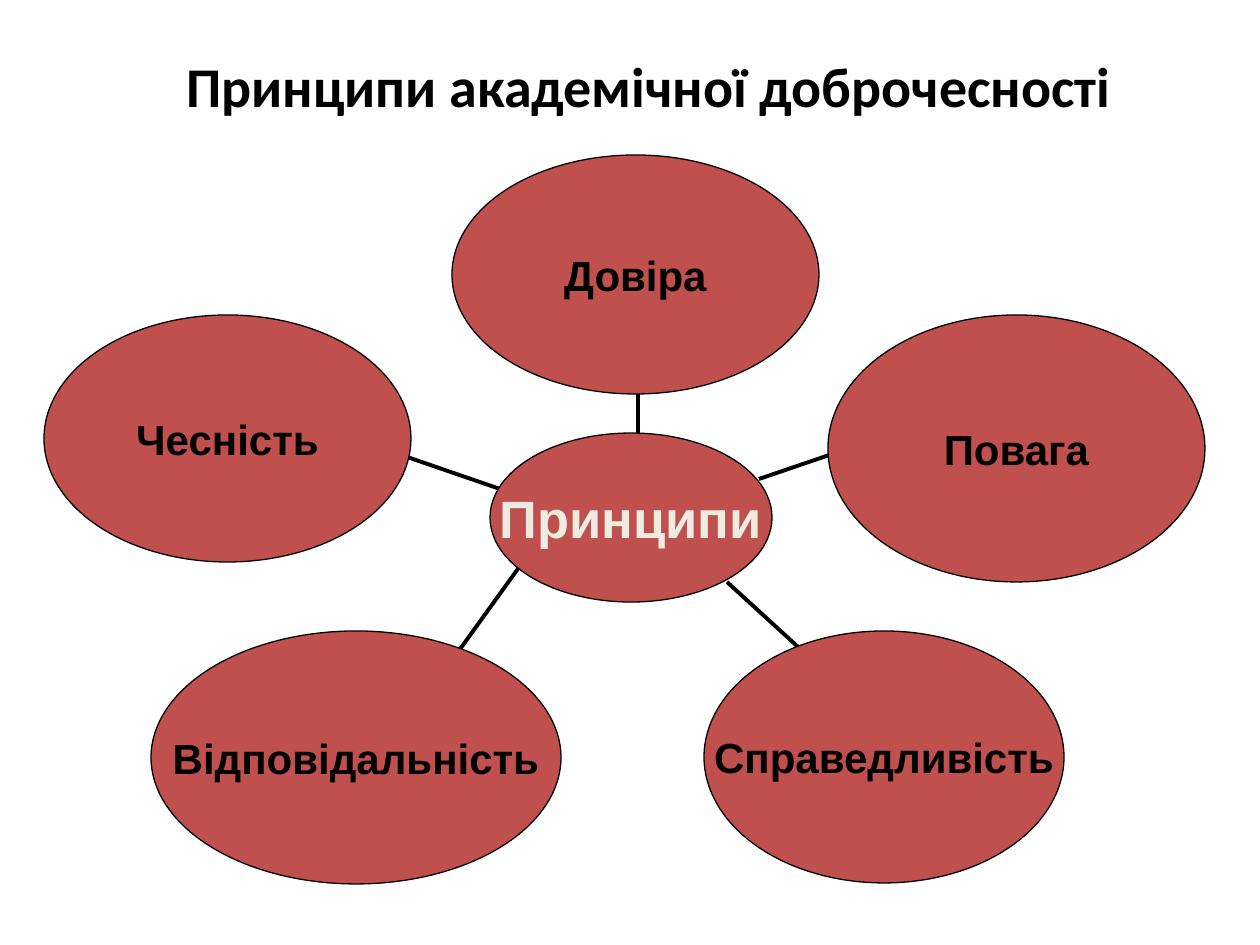
from dataclasses import dataclass

from lxml import etree
from pptx import Presentation
from pptx.dml.color import RGBColor
from pptx.enum.shapes import MSO_CONNECTOR, MSO_SHAPE
from pptx.enum.text import MSO_ANCHOR, PP_ALIGN
from pptx.oxml.ns import qn
from pptx.util import Emu, Pt

ELLIPSE = MSO_SHAPE.OVAL
STRAIGHT = MSO_CONNECTOR.STRAIGHT
CENTER = PP_ALIGN.CENTER
MIDDLE = MSO_ANCHOR.MIDDLE
TITLE_ONLY = 5
PX_PER_INCH = 126


def px(length):
    return Emu(round(length * 914400 / PX_PER_INCH))


@dataclass(frozen=True)
class Theme:
    ink: RGBColor = RGBColor.from_string("000000")
    hub_text: RGBColor = RGBColor.from_string("EEECE1")
    bubble: RGBColor = RGBColor.from_string("C0504D")
    title_font: str = "Calibri"
    body_font: str = "Arial"
    title_size: int = 32
    hub_size: int = 30
    principle_size: int = 24
    outline: float = 0.75
    spoke: float = 2.25


class Diagram:
    def __init__(self, page, theme):
        self.page = page
        self.theme = theme

    def label(self, frame, text, font, size, color):
        frame.text = text
        frame.vertical_anchor = MIDDLE
        para = frame.paragraphs[0]
        para.alignment = CENTER
        span = para.runs[0]
        span.font.name = font
        span.font.size = Pt(size)
        span.font.bold = True
        span.font.color.rgb = color

    def title(self, text, left, top, width, height):
        box = self.page.shapes.title
        box.left, box.top, box.width, box.height = map(px, (left, top, width, height))
        self.label(box.text_frame, text, self.theme.title_font,
                   self.theme.title_size, self.theme.ink)

    def spoke(self, *ends):
        line = self.page.shapes.add_connector(STRAIGHT, *map(px, ends))
        line.line.color.rgb = self.theme.ink
        line.line.width = Pt(self.theme.spoke)
        etree.SubElement(line._element.spPr, qn("a:effectLst"))

    def bubble(self, text, bounds, size, color):
        oval = self.page.shapes.add_shape(ELLIPSE, *map(px, bounds))
        oval.shadow.inherit = False
        oval.fill.solid()
        oval.fill.fore_color.rgb = self.theme.bubble
        oval.line.color.rgb = self.theme.ink
        oval.line.width = Pt(self.theme.outline)
        frame = oval.text_frame
        frame.margin_left = frame.margin_right = 0
        frame.margin_top = frame.margin_bottom = 0
        frame.word_wrap = False
        self.label(frame, text, self.theme.body_font, size, color)


PRINCIPLES = [
    ("Чесність", (44, 315, 367, 247), (500, 489, 378, 447)),
    ("Справедливість", (704, 631, 360, 252), (727, 582, 820, 667)),
    ("Повага", (828, 315, 377, 267), (759, 479, 882, 437)),
    ("Довіра", (452, 155, 367, 239), (638, 479, 638, 394)),
    ("Відповідальність", (151, 631, 410, 253), (520, 566, 440, 677)),
]


def main():
    deck = Presentation()
    deck.slide_width, deck.slide_height = px(1260), px(945)
    theme = Theme()
    diagram = Diagram(deck.slides.add_slide(deck.slide_layouts[TITLE_ONLY]), theme)

    diagram.title("Принципи академічної доброчесності", 103, 6, 1092, 158)
    for name, bounds, ends in PRINCIPLES:
        diagram.spoke(*ends)
    for name, bounds, ends in PRINCIPLES:
        diagram.bubble(name, bounds, theme.principle_size, theme.ink)
    diagram.bubble("Принципи", (490, 433, 282, 169), theme.hub_size, theme.hub_text)

    deck.save("out.pptx")


if __name__ == "__main__":
    main()
